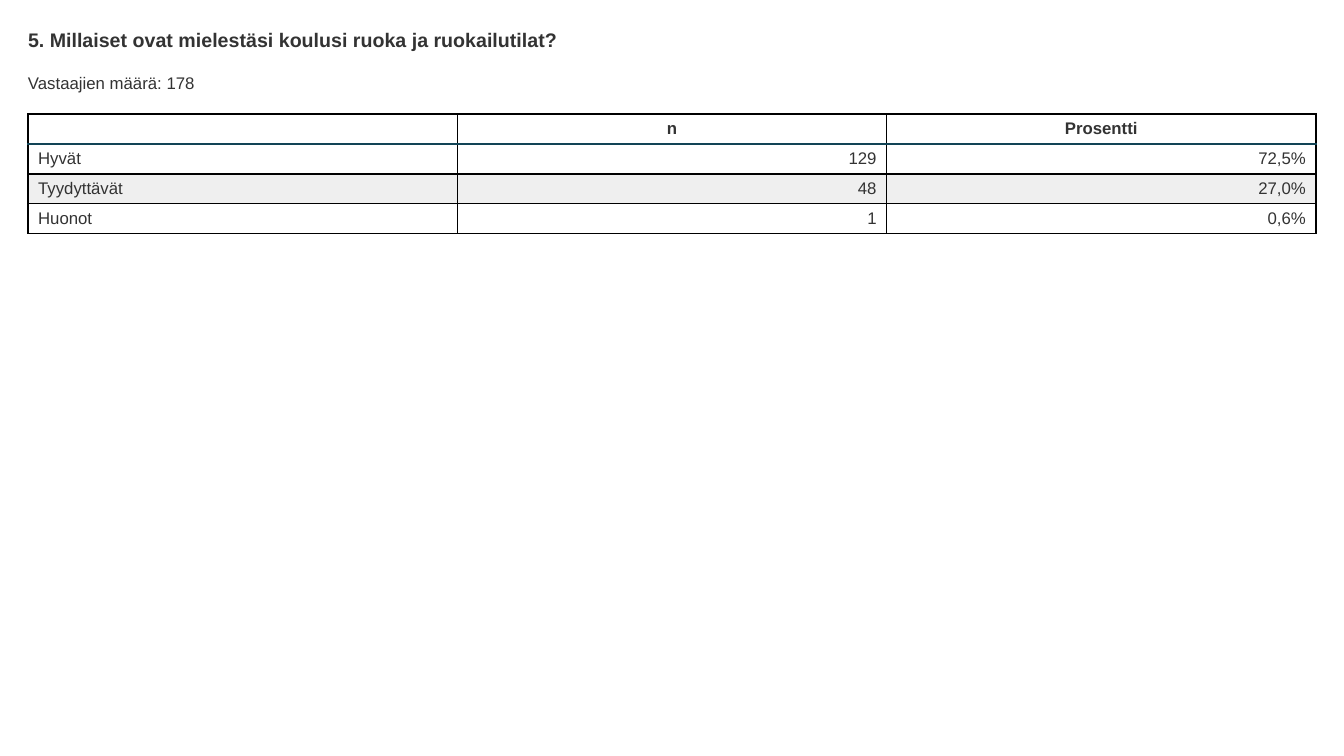
import dataclasses

import pptx
import pptx.dml.color
import pptx.enum.text
import pptx.oxml.ns
import pptx.util
import lxml.etree

TITLE = "5. Millaiset ovat mielestäsi koulusi ruoka ja ruokailutilat?"
RESPONDENTS = "Vastaajien määrä: 178"
HEADER = ("", "n", "Prosentti")
ANSWERS = [
    ("Hyvät", "129", "72,5%"),
    ("Tyydyttävät", "48", "27,0%"),
    ("Huonot", "1", "0,6%"),
]


@dataclasses.dataclass(frozen=True)
class Theme:
    font: str = "Arial"
    text: str = "333333"
    plain: str = "FFFFFF"
    band: str = "EFEFEF"
    grid: str = "000000"
    rule: str = "124456"
    title_size: int = 14
    body_size: int = 12
    grid_width: int = 1
    rule_width: int = 2


THEME = Theme()
ALIGN = pptx.enum.text.PP_ALIGN
MIDDLE = pptx.enum.text.MSO_ANCHOR.MIDDLE
SLIDE_W, SLIDE_H = 1344, 756
LEFT, CONTENT_W = 28, 1288
TITLE_TOP, TITLE_H = 28, 23
COUNT_TOP, COUNT_H = 73, 20
TABLE_TOP, ROW_H = 114, 30


def px(n):
    return pptx.util.Emu(round(n * 914400 / 100.8))


def rgb(color):
    return pptx.dml.color.RGBColor.from_string(color)


def write(p, text, size, bold=False, align=ALIGN.LEFT):
    p.text = text
    p.alignment = align
    p.font.name = THEME.font
    p.font.size = pptx.util.Pt(size)
    p.font.bold = bold
    p.font.color.rgb = rgb(THEME.text)


def place_text(sp, top, height, text, size, bold=False):
    sp.left, sp.top, sp.width, sp.height = px(LEFT), px(top), px(CONTENT_W), px(height)
    tf = sp.text_frame
    tf.margin_left = tf.margin_right = tf.margin_top = tf.margin_bottom = 0
    tf.word_wrap = True
    tf.auto_size = pptx.enum.text.MSO_AUTO_SIZE.NONE
    tf.vertical_anchor = pptx.enum.text.MSO_ANCHOR.TOP
    write(tf.paragraphs[0], text, size, bold)


def add_border(cell, side, color, width):
    tag = pptx.oxml.ns.qn
    tc_pr = cell._tc.get_or_add_tcPr()
    ln = lxml.etree.SubElement(tc_pr, tag("a:ln" + side), w=str(pptx.util.Pt(width)))
    fill = lxml.etree.SubElement(ln, tag("a:solidFill"))
    lxml.etree.SubElement(fill, tag("a:srgbClr"), val=color)


def fill_cell(cell, text, row, col):
    cell.margin_top = cell.margin_bottom = 0
    cell.vertical_anchor = MIDDLE
    header = row == 0
    rule_sides = {0: "B", 1: "T"}
    for side in "LRTB":
        if rule_sides.get(row) == side:
            add_border(cell, side, THEME.rule, THEME.rule_width)
        else:
            add_border(cell, side, THEME.grid, THEME.grid_width)
    cell.fill.solid()
    cell.fill.fore_color.rgb = rgb(THEME.band if row == 2 else THEME.plain)
    align = ALIGN.CENTER if header else ALIGN.RIGHT if col else ALIGN.LEFT
    write(cell.text_frame.paragraphs[0], text, THEME.body_size, header, align)


def main():
    prs = pptx.Presentation()
    prs.slide_width, prs.slide_height = px(SLIDE_W), px(SLIDE_H)
    s = prs.slides.add_slide(prs.slide_layouts[5])
    place_text(s.shapes.title, TITLE_TOP, TITLE_H, TITLE, THEME.title_size, True)
    count = s.shapes.add_textbox(0, 0, 0, 0)
    place_text(count, COUNT_TOP, COUNT_H, RESPONDENTS, THEME.body_size)

    rows = [HEADER, *ANSWERS]
    table = s.shapes.add_table(
        len(rows), len(HEADER), px(LEFT), px(TABLE_TOP),
        px(CONTENT_W), px(ROW_H * len(rows)),
    ).table
    table.first_row = table.horz_banding = False
    for row, values in enumerate(rows):
        for col, text in enumerate(values):
            fill_cell(table.cell(row, col), text, row, col)

    prs.save("out.pptx")


if __name__ == "__main__":
    main()
